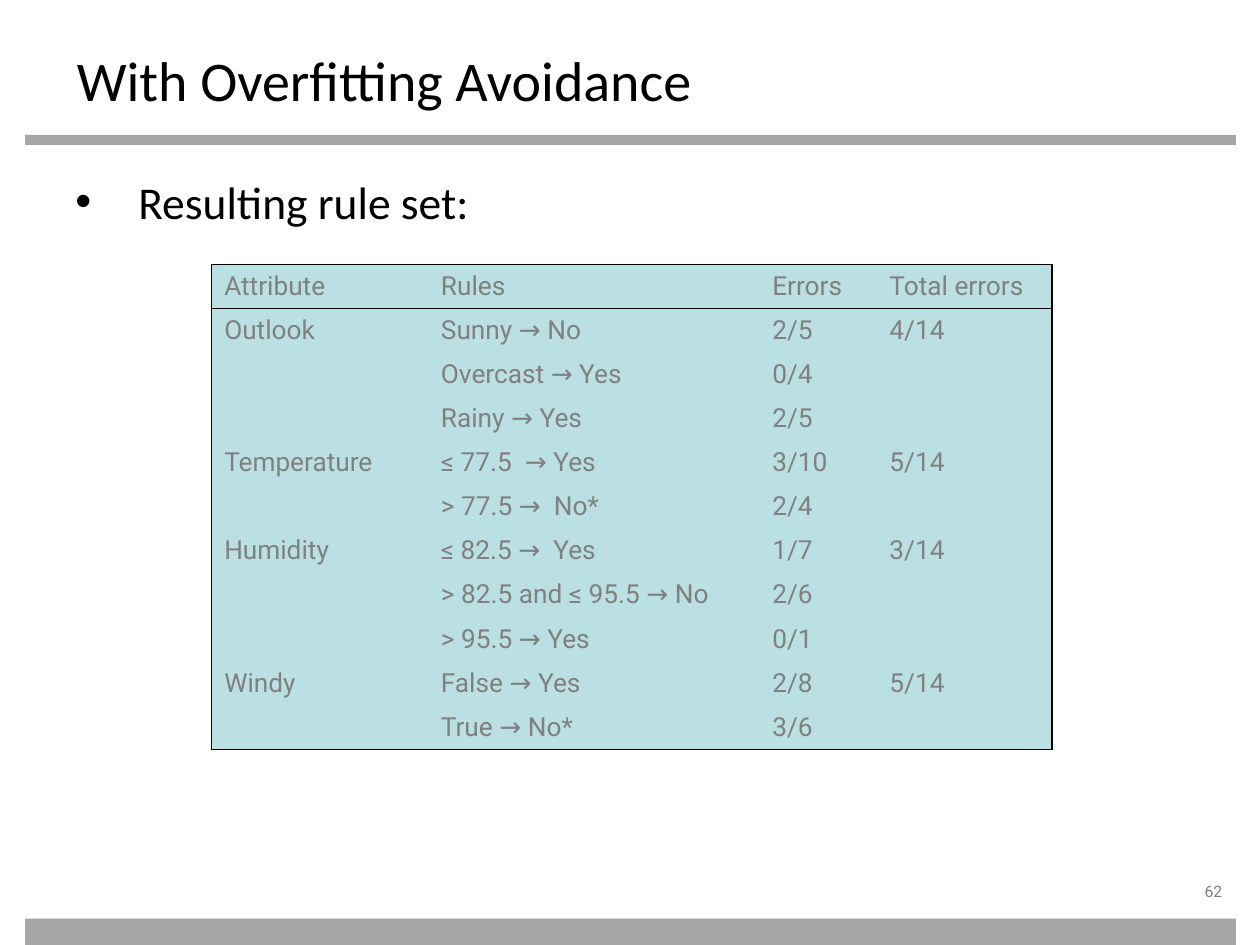
from dataclasses import dataclass

from pptx import Presentation
from pptx.dml.color import RGBColor
from pptx.enum import shapes, text
from pptx.oxml import parse_xml
from pptx.oxml.ns import nsdecls
from pptx.util import Inches, Pt


@dataclass(frozen=True)
class Theme:
    black: str = "000000"
    grey: str = "808080"
    bar: str = "A6A6A6"
    table_fill: str = "BBE0E3"
    heading_font: str = "Calibri"
    detail_font: str = "Roboto"
    title_size: int = 32
    body_size: int = 26
    table_size: int = 15
    number_size: int = 9
    border_width: int = 1


THEME = Theme()
COLUMN_WIDTHS = (1.72, 2.63, 0.93, 1.39)
ROW_HEIGHT = 0.35
RULES = (
    ("Attribute", "Rules", "Errors", "Total errors"),
    ("Outlook", "Sunny → No", "2/5", "4/14"),
    ("", "Overcast → Yes", "0/4", ""),
    ("", "Rainy → Yes", "2/5", ""),
    ("Temperature", "≤ 77.5  → Yes", "3/10", "5/14"),
    ("", "> 77.5 →  No*", "2/4", ""),
    ("Humidity", "≤ 82.5 →  Yes", "1/7", "3/14"),
    ("", "> 82.5 and ≤ 95.5 → No", "2/6", ""),
    ("", "> 95.5 → Yes", "0/1", ""),
    ("Windy", "False → Yes", "2/8", "5/14"),
    ("", "True → No*", "3/6", ""),
)


def set_font(paragraph, name, size, color):
    paragraph.font.name = name
    paragraph.font.size = Pt(size)
    paragraph.font.color.rgb = RGBColor.from_string(color)


def set_frame(frame, left=0.1, top=0.05, right=0.1, bottom=0.05):
    frame.word_wrap = True
    frame.auto_size = text.MSO_AUTO_SIZE.NONE
    frame.vertical_anchor = text.MSO_ANCHOR.TOP
    frame.margin_left, frame.margin_top = Inches(left), Inches(top)
    frame.margin_right, frame.margin_bottom = Inches(right), Inches(bottom)


def add_bar(slide, top, height):
    bar = slide.shapes.add_shape(
        shapes.MSO_SHAPE.RECTANGLE,
        Inches(0.2), Inches(top), Inches(9.61), Inches(height))
    bar.shadow.inherit = False
    bar.fill.solid()
    bar.fill.fore_color.rgb = RGBColor.from_string(THEME.bar)
    bar.line.fill.background()


def set_title(slide, wording):
    title = slide.shapes.title
    title.left, title.top = Inches(0.51), Inches(0.28)
    title.width, title.height = Inches(9), Inches(0.55)
    set_frame(title.text_frame, top=0.08)
    title.text_frame.text = wording
    paragraph = title.text_frame.paragraphs[0]
    paragraph.alignment = text.PP_ALIGN.LEFT
    set_font(paragraph, THEME.heading_font, THEME.title_size, THEME.black)


def add_bullet(slide, wording):
    body = slide.shapes.add_textbox(
        Inches(0.5), Inches(1.31), Inches(9), Inches(5.43))
    set_frame(body.text_frame, top=0.07)
    paragraph = body.text_frame.paragraphs[0]
    paragraph.text = wording
    properties = paragraph._p.get_or_add_pPr()
    properties.set("marL", str(Inches(0.5)))
    properties.set("indent", str(-Inches(0.5)))
    properties.append(parse_xml(f'<a:buFont {nsdecls("a")} typeface="Arial"/>'))
    properties.append(parse_xml(f'<a:buChar {nsdecls("a")} char="•"/>'))
    set_font(paragraph, THEME.heading_font, THEME.body_size, THEME.black)


def set_borders(cell, drawn_sides):
    """Draw the named sides (of L, R, T, B) and clear the others."""
    properties = cell._tc.get_or_add_tcPr()
    for index, side in enumerate("LRTB"):
        paint = "<a:noFill/>"
        if side in drawn_sides:
            paint = f'<a:solidFill><a:srgbClr val="{THEME.black}"/></a:solidFill>'
        properties.insert(index, parse_xml(
            f'<a:ln{side} {nsdecls("a")} w="{Pt(THEME.border_width)}">'
            f'{paint}</a:ln{side}>'))


def fill_cell(cell, wording, drawn_sides):
    cell.fill.solid()
    cell.fill.fore_color.rgb = RGBColor.from_string(THEME.table_fill)
    set_borders(cell, drawn_sides)
    cell.text = wording
    if not wording:
        cell.margin_top = cell.margin_bottom = 0
    set_font(cell.text_frame.paragraphs[0],
             THEME.detail_font, THEME.table_size, THEME.grey)


def add_rule_table(slide, rules):
    last_row, last_column = len(rules) - 1, len(COLUMN_WIDTHS) - 1
    table = slide.shapes.add_table(
        len(rules), len(COLUMN_WIDTHS), Inches(1.68), Inches(2.1),
        Inches(sum(COLUMN_WIDTHS)), Inches(ROW_HEIGHT * len(rules))).table
    table.first_row = table.horz_banding = False
    for column, width in zip(table.columns, COLUMN_WIDTHS):
        column.width = Inches(width)
    for r, row in enumerate(rules):
        table.rows[r].height = Inches(ROW_HEIGHT)
        for c, wording in enumerate(row):
            sides = {"L": c == 0, "R": c == last_column,
                     "T": r in (0, 1), "B": r in (0, last_row)}
            drawn_sides = [side for side, drawn in sides.items() if drawn]
            fill_cell(table.cell(r, c), wording, drawn_sides)


def add_page_number(slide, number):
    box = slide.shapes.add_textbox(
        Inches(8.7), Inches(7), Inches(1.1), Inches(0.22))
    set_frame(box.text_frame, left=0, top=0, bottom=0)
    paragraph = box.text_frame.paragraphs[0]
    paragraph.text = number
    paragraph.alignment = text.PP_ALIGN.RIGHT
    set_font(paragraph, THEME.detail_font, THEME.number_size, THEME.grey)


def main():
    deck = Presentation()
    deck.slide_width, deck.slide_height = Inches(10), Inches(7.5)
    slide = deck.slides.add_slide(deck.slide_layouts.get_by_name("Title Only"))
    add_bar(slide, top=1.07, height=0.08)
    add_bar(slide, top=7.29, height=0.21)
    set_title(slide, "With Overfitting Avoidance")
    add_bullet(slide, "Resulting rule set:")
    add_page_number(slide, "62")
    add_rule_table(slide, RULES)
    deck.save("out.pptx")


if __name__ == "__main__":
    main()
